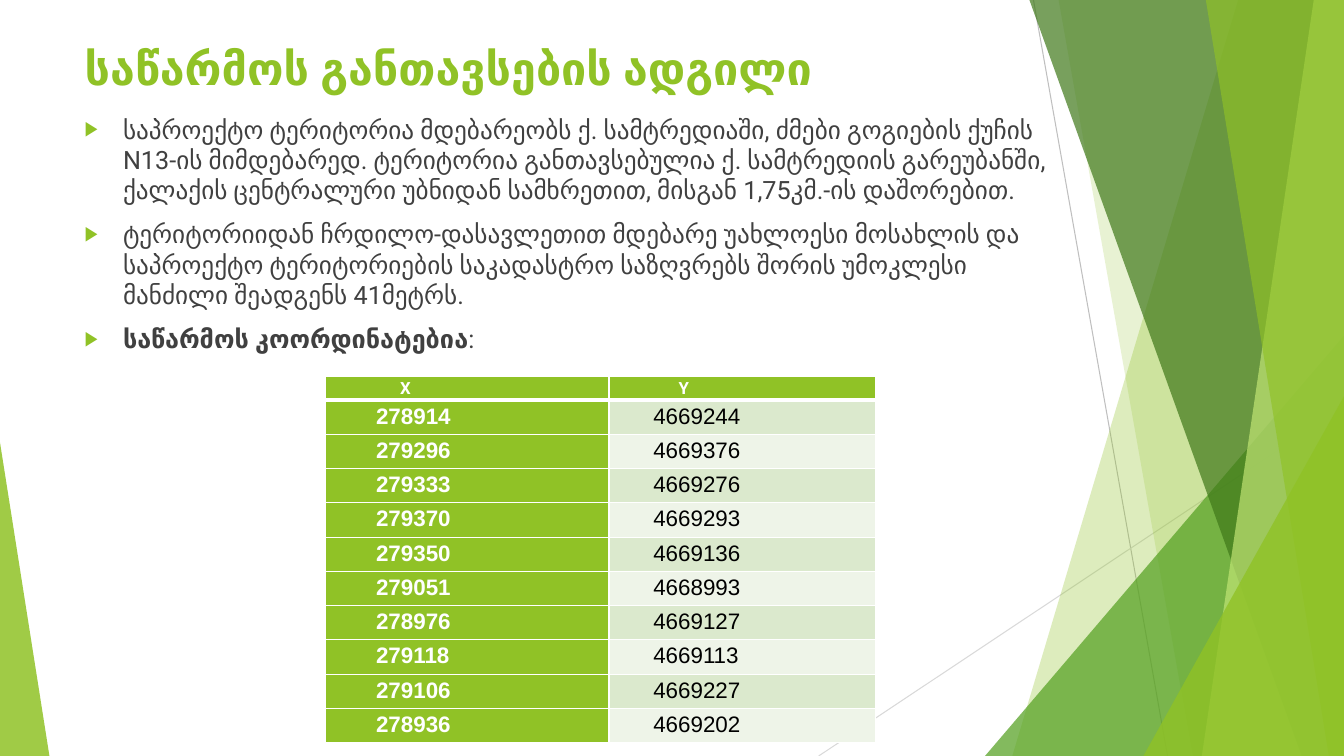
from dataclasses import dataclass

from lxml import etree
from pptx import Presentation, util as u
from pptx.dml.color import RGBColor
from pptx.enum import shapes as kinds, text as t
from pptx.oxml import parse_xml
from pptx.oxml.ns import nsdecls, qn

PX = 9144  # EMU, 100 px to the inch
WIDE, HIGH = 1333, 750


@dataclass(frozen=True)
class Theme:
    font: str = "Roboto"
    digits: str = "Arial"
    lime: str = "90C226"
    green: str = "54A021"
    dark: str = "3F7819"
    pale: str = "C0E474"
    ink: str = "404040"
    black: str = "000000"
    white: str = "FFFFFF"
    bands: tuple[str, str] = ("DBE9CD", "EEF4E8")
    title: int = 32
    body: int = 18
    cell: int = 16
    head: int = 12


@dataclass(frozen=True)
class Ray:
    start: tuple[int, int]
    end: tuple[int, int]
    color: str


@dataclass(frozen=True)
class Slab:
    """A panel running from the slide's top to its foot, flush with the right edge."""
    top: int
    foot: int
    color: str
    alpha: int


@dataclass(frozen=True)
class Spike:
    """A right triangle standing on the slide's foot; tip is 0 for left, 1 for right."""
    left: int
    top: int
    width: int
    tip: int
    color: str
    alpha: int


LOOK = Theme()
RAYS = [
    Ray((1025, 0), (1158, HIGH), "BFBFBF"),
    Ray((WIDE, 403), (812, HIGH), "D9D9D9"),
]
FACETS = [
    Slab(1228, 1004, LOOK.lime, 30),
    Slab(1050, 1183, LOOK.lime, 20),
    Spike(977, 333, 356, 1, LOOK.green, 72),
    Slab(1021, 1291, LOOK.dark, 70),
    Slab(1303, 1192, LOOK.pale, 70),
    Slab(1196, 1318, LOOK.lime, 65),
    Spike(1134, 393, 199, 1, LOOK.lime, 80),
    Spike(0, 439, 49, 0, LOOK.lime, 85),
]
TITLE = "საწარმოს განთავსების ადგილი"
POINTS = [
    [("საპროექტო ტერიტორია მდებარეობს ქ. სამტრედიაში, ძმები გოგიების ქუჩის "
      "N13-ის მიმდებარედ. ტერიტორია განთავსებულია ქ. სამტრედიის გარეუბანში, "
      "ქალაქის ცენტრალური უბნიდან სამხრეთით, მისგან 1,75კმ.-ის დაშორებით.", False)],
    [("ტერიტორიიდან ჩრდილო-დასავლეთით მდებარე უახლოესი მოსახლის და "
      "საპროექტო ტერიტორიების საკადასტრო საზღვრებს შორის უმოკლესი "
      "მანძილი შეადგენს 41მეტრს.", False)],
    [("საწარმოს კოორდინატებია", True), (":", False)],
]
COORDS = [
    ("X", "Y"),
    ("278914", "4669244"), ("279296", "4669376"), ("279333", "4669276"),
    ("279370", "4669293"), ("279350", "4669136"), ("279051", "4668993"),
    ("278976", "4669127"), ("279118", "4669113"), ("279106", "4669227"),
    ("278936", "4669202"),
]
COLS = (281, 264)
HEAD_ROW, ROW = 24, 34
HEAD_PAD, PAD = (74, 69), (50, 44)


def write(para, words: str, *, size: int, color: str, bold: bool = False,
          font: str = LOOK.font) -> None:
    run = para.add_run()
    run.text = words
    run.font.size = u.Pt(size)
    run.font.name = font
    run.font.bold = bold
    run.font.color.rgb = RGBColor.from_string(color)


def paint(shape, color: str, alpha: int) -> None:
    shape.shadow.inherit = False
    shape.line.fill.background()
    shape.fill.solid()
    shape.fill.fore_color.rgb = RGBColor.from_string(color)
    tint = shape.element.spPr.find(".//" + qn("a:srgbClr"))
    etree.SubElement(tint, qn("a:alpha"), val=str(alpha * 1000))


def draw_ray(slide, ray: Ray) -> None:
    line = slide.shapes.add_connector(
        kinds.MSO_CONNECTOR.STRAIGHT, *(n * PX for n in ray.start + ray.end))
    line.line.width = u.Pt(0.75)
    line.line.color.rgb = RGBColor.from_string(ray.color)
    etree.SubElement(line.element.spPr, qn("a:effectLst"))


def draw_facet(slide, facet: Slab | Spike) -> None:
    if isinstance(facet, Slab):
        pen = slide.shapes.build_freeform(facet.top, 0, scale=PX)
        pen.add_line_segments([(WIDE, 0), (WIDE, HIGH), (facet.foot, HIGH)])
        shape = pen.convert_to_shape()
    else:
        shape = slide.shapes.add_shape(
            kinds.MSO_SHAPE.ISOSCELES_TRIANGLE, facet.left * PX, facet.top * PX,
            facet.width * PX, (HIGH - facet.top) * PX)
        shape.adjustments[0] = facet.tip
    paint(shape, facet.color, facet.alpha)


def place(holder, left: int, top: int, width: int, height: int):
    """Set a placeholder's box, bring it to the front and return its text frame."""
    holder.left, holder.top = left * PX, top * PX
    holder.width, holder.height = width * PX, height * PX
    holder.element.getparent().append(holder.element)
    frame = holder.text_frame
    frame.word_wrap = True
    frame.auto_size = t.MSO_AUTO_SIZE.NONE
    frame.vertical_anchor = t.MSO_ANCHOR.TOP
    return frame


def add_bullet(para) -> None:
    props = para._p.get_or_add_pPr()
    props.set("marL", str(38 * PX))
    props.set("indent", str(-38 * PX))
    tint = etree.SubElement(props, qn("a:buClr"))
    etree.SubElement(tint, qn("a:srgbClr"), val=LOOK.lime)
    etree.SubElement(props, qn("a:buSzPct"), val="80000")
    etree.SubElement(props, qn("a:buFont"), typeface=LOOK.digits)
    etree.SubElement(props, qn("a:buChar"), char="▶")


def fill_list(frame) -> None:
    for i, runs in enumerate(POINTS):
        para = frame.paragraphs[0] if i == 0 else frame.add_paragraph()
        para.alignment = t.PP_ALIGN.LEFT
        para.space_before = u.Pt(10)
        add_bullet(para)
        for words, bold in runs:
            write(para, words, size=LOOK.body, color=LOOK.ink, bold=bold)


def edge_cell(cell, row: int) -> None:
    """Draw white borders, heavier between the header and the first row."""
    props = cell._tc.get_or_add_tcPr()
    heavy = {0: "lnB", 1: "lnT"}.get(row)
    for side in ("lnL", "lnR", "lnT", "lnB"):
        width = u.Pt(3 if side == heavy else 1)
        props.append(parse_xml(
            f'<a:{side} {nsdecls("a")} w="{width}"><a:solidFill>'
            f'<a:srgbClr val="{LOOK.white}"/></a:solidFill></a:{side}>'))


def add_grid(slide) -> None:
    rows = len(COORDS)
    grid = slide.shapes.add_table(
        rows, len(COLS), 323 * PX, 373 * PX, sum(COLS) * PX,
        (HEAD_ROW + ROW * (rows - 1)) * PX).table
    for col, width in enumerate(COLS):
        grid.columns[col].width = width * PX
    for row, values in enumerate(COORDS):
        head = row == 0
        grid.rows[row].height = (HEAD_ROW if head else ROW) * PX
        for col, value in enumerate(values):
            strong = head or col == 0
            cell = grid.cell(row, col)
            edge_cell(cell, row)
            cell.fill.solid()
            cell.fill.fore_color.rgb = RGBColor.from_string(
                LOOK.lime if strong else LOOK.bands[(row - 1) % 2])
            cell.margin_left = (HEAD_PAD if head else PAD)[col] * PX
            cell.margin_right = 7 * PX
            cell.margin_top = cell.margin_bottom = 0
            para = cell.text_frame.paragraphs[0]
            para.alignment = t.PP_ALIGN.JUSTIFY
            para.line_spacing = 1.15
            write(para, value, bold=strong,
                  size=LOOK.head if head else LOOK.cell,
                  font=LOOK.font if head else LOOK.digits,
                  color=LOOK.white if strong else LOOK.black)


def main() -> None:
    deck = Presentation()
    deck.slide_width, deck.slide_height = WIDE * PX, HIGH * PX
    slide = deck.slides.add_slide(deck.slide_layouts[1])
    for ray in RAYS:
        draw_ray(slide, ray)
    for facet in FACETS:
        draw_facet(slide, facet)
    title = place(slide.shapes.title, 74, 35, 940, 144).paragraphs[0]
    title.alignment = t.PP_ALIGN.LEFT
    write(title, TITLE, size=LOOK.title, color=LOOK.lime, bold=True)
    fill_list(place(slide.placeholders[1], 74, 108, 1002, 562))
    add_grid(slide)
    deck.save("out.pptx")


if __name__ == "__main__":
    main()
